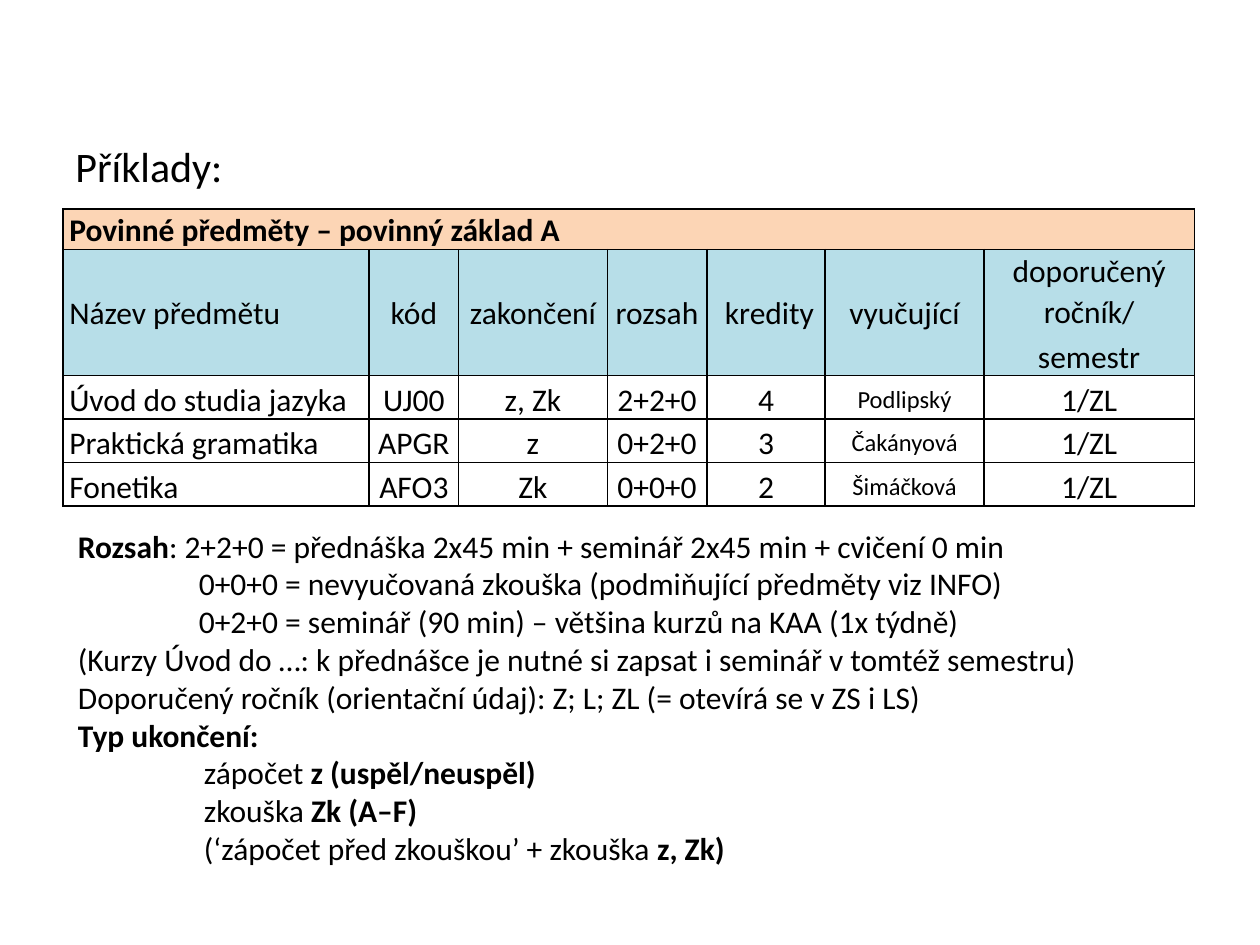
from dataclasses import dataclass

from lxml.etree import SubElement
from pptx import Presentation
from pptx.dml.color import RGBColor
from pptx.enum.text import MSO_ANCHOR as Anchor, MSO_AUTO_SIZE as AutoSize, PP_ALIGN as Align
from pptx.oxml.ns import qn
from pptx.util import Inches, Pt


@dataclass(frozen=True)
class Theme:
    font: str = "Calibri"
    ink: str = "000000"
    title_fill: str = "FCD5B5"
    header_fill: str = "B7DEE8"
    heading_size: int = 24
    body_size: int = 18
    teacher_size: int = 14
    border: float = 1


THEME = Theme()

TABLE_TITLE = "Povinné předměty – povinný základ A"
COLUMN_WIDTHS = [2.43, 0.71, 1.18, 0.79, 0.94, 1.26, 1.67]
ROW_HEIGHTS = [0.32, 1.0] + [0.34] * 3
TEACHER_COLUMN = 5
COLUMN_NAMES = ["Název předmětu", "kód", "zakončení", "rozsah", " kredity",
                "vyučující", "doporučený ročník/\nsemestr"]
COURSES = [
    ["Úvod do studia jazyka", "UJ00", "z, Zk", "2+2+0", "4", "Podlipský", "1/ZL"],
    ["Praktická gramatika", "APGR", "z", "0+2+0", "3", "Čakányová", "1/ZL"],
    ["Fonetika", "AFO3", "Zk", "0+0+0", "2", "Šimáčková", "1/ZL"],
]

# Paragraph spacing by kind of table row
TITLE_FORMAT = {"line_spacing": 1.07, "space_before": Pt(3), "space_after": Pt(3)}
HEADER_FORMAT = {"line_spacing": 1.07, "space_before": Pt(2)}
COURSE_FORMAT = {"line_spacing": 1.15}

# Each note: left indent in inches, then (text, bold) runs
NOTES = [
    (0, [("Rozsah", True),
         (": 2+2+0 = přednáška 2x45 min + seminář 2x45 min + cvičení 0 min", False)]),
    (0.96, [("0+0+0 = nevyučovaná zkouška (podmiňující předměty viz INFO)", False)]),
    (0.96, [("0+2+0 = seminář (90 min) – většina kurzů na KAA (1x týdně)", False)]),
    (0, [("(Kurzy Úvod do …: k přednášce je nutné si zapsat i seminář v tomtéž semestru)",
          False)]),
    (0, [("Doporučený ročník (orientační údaj): Z; L; ZL (= otevírá se v ZS i LS)", False)]),
    (0, [("Typ ukončení:", True)]),
    (1, [("zápočet ", False), ("z (uspěl/neuspěl)", True)]),
    (1, [("zkouška ", False), ("Zk (A–F)", True)]),
    (1, [("(‘zápočet před zkouškou’ + zkouška ", False), ("z, Zk)", True)]),
]


def add_run(paragraph, text, size, bold=False):
    run = paragraph.add_run()
    run.text = text
    for name, value in {"name": THEME.font, "size": Pt(size), "bold": bold}.items():
        setattr(run.font, name, value)
    run.font.color.rgb = RGBColor.from_string(THEME.ink)


def add_text(slide, left, top, width, height, notes, size, wrap):
    frame = slide.shapes.add_textbox(
        Inches(left), Inches(top), Inches(width), Inches(height)).text_frame
    frame.word_wrap = wrap
    frame.auto_size = AutoSize.SHAPE_TO_FIT_TEXT
    for index, (indent, runs) in enumerate(notes):
        paragraph = frame.add_paragraph() if index else frame.paragraphs[0]
        if indent:
            properties = paragraph._p.get_or_add_pPr()
            properties.set("marL", str(Inches(indent)))
            properties.set("indent", "0")
        for text, bold in runs:
            add_run(paragraph, text, size, bold)


def add_borders(cell):
    properties = cell._tc.get_or_add_tcPr()
    for side in ("a:lnL", "a:lnR", "a:lnT", "a:lnB"):
        line = SubElement(properties, qn(side), w=str(Pt(THEME.border)))
        solid = SubElement(line, qn("a:solidFill"))
        SubElement(solid, qn("a:srgbClr"), val=THEME.ink)


def fill_cell(cell, text, size, spacing, align=Align.LEFT, fill=None, bold=False):
    cell_format = {"margin_left": Inches(0.05), "margin_right": Inches(0.05),
                   "margin_top": 0, "margin_bottom": 0, "vertical_anchor": Anchor.MIDDLE}
    for name, value in cell_format.items():
        setattr(cell, name, value)
    add_borders(cell)
    if fill:
        cell.fill.solid()
        cell.fill.fore_color.rgb = RGBColor.from_string(fill)
    else:
        cell.fill.background()
    frame = cell.text_frame
    for index, line in enumerate(text.split("\n")):
        paragraph = frame.add_paragraph() if index else frame.paragraphs[0]
        for name, value in {**spacing, "alignment": align}.items():
            setattr(paragraph, name, value)
        add_run(paragraph, line, size, bold)


def add_course_table(slide):
    table = slide.shapes.add_table(
        len(ROW_HEIGHTS), len(COLUMN_WIDTHS), Inches(0.5), Inches(1.66),
        Inches(sum(COLUMN_WIDTHS)), Inches(sum(ROW_HEIGHTS))).table
    for column, width in zip(table.columns, COLUMN_WIDTHS):
        column.width = Inches(width)
    for row, height in zip(table.rows, ROW_HEIGHTS):
        row.height = Inches(height)

    # Title row across all columns
    last = len(COLUMN_WIDTHS) - 1
    table.cell(0, 0).merge(table.cell(0, last))
    fill_cell(table.cell(0, 0), TABLE_TITLE, THEME.body_size, TITLE_FORMAT,
              fill=THEME.title_fill, bold=True)
    for column in range(1, last + 1):
        add_borders(table.cell(0, column))

    # Column names and courses
    for row, texts in enumerate([COLUMN_NAMES] + COURSES, start=1):
        is_header = row == 1
        for column, text in enumerate(texts):
            is_teacher = column == TEACHER_COLUMN and not is_header
            fill_cell(table.cell(row, column), text,
                      THEME.teacher_size if is_teacher else THEME.body_size,
                      HEADER_FORMAT if is_header else COURSE_FORMAT,
                      Align.CENTER if column else Align.LEFT,
                      THEME.header_fill if is_header else None)


def main():
    deck = Presentation()
    deck.slide_width, deck.slide_height = Inches(10), Inches(7.5)
    slide = deck.slides.add_slide(deck.slide_layouts[6])

    # Notes, course table, heading
    add_text(slide, 0.52, 4.13, 8.98, 2.83, NOTES, THEME.body_size, True)
    add_course_table(slide)
    add_text(slide, 0.5, 1.07, 1.38, 0.5, [(0, [("Příklady:", False)])],
             THEME.heading_size, False)

    deck.save("out.pptx")


if __name__ == "__main__":
    main()
